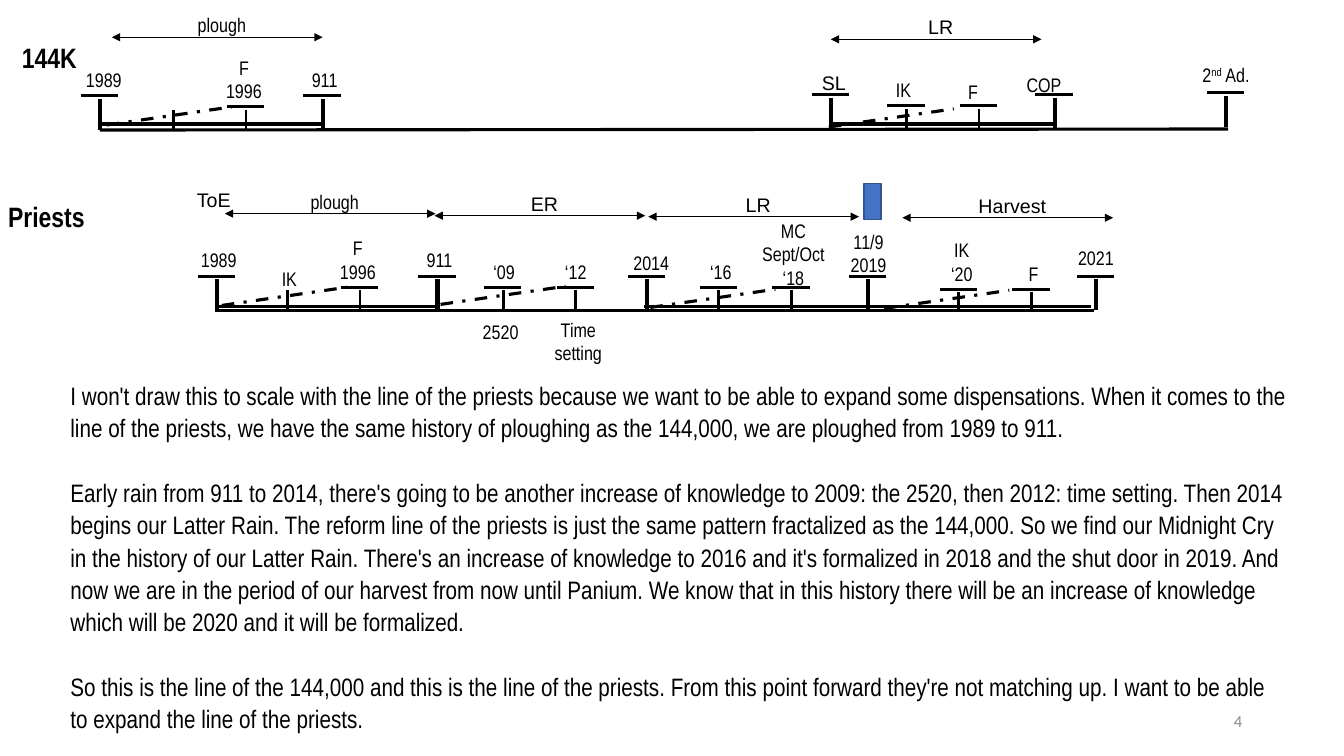
from lxml.etree import SubElement
from pptx import Presentation
from pptx.dml.color import RGBColor
from pptx.enum.dml import MSO_LINE
from pptx.enum.shapes import MSO_CONNECTOR, MSO_SHAPE
from pptx.enum.text import MSO_ANCHOR, MSO_AUTO_SIZE, PP_ALIGN
from pptx.oxml.ns import qn
from pptx.util import Inches, Pt

COLORS = {"ink": "000000", "door": "4472C4", "door_edge": "325491", "page": "8C8C8C"}
NARROW = "Arial Narrow"

BASELINES = [(0.99, 1.29, 12.18, 1.28), (2.13, 3.08, 10.85, 3.08)]
BARS = [(0.99, 1.23), (8.25, 1.23), (2.15, 3.04), (6.39, 3.04), (8.61, 3.04)]
RISES = [(1.06, 1.24), (8.22, 1.26), (2.2, 3.03), (4.37, 3.02), (6.45, 3.05), (8.77, 3.06)]
MAJOR_MARKS = [(0.99, 0.95), (3.2, 0.95), (8.24, 0.94), (10.46, 0.94), (12.16, 0.92),
               (2.15, 2.74), (4.34, 2.74), (6.42, 2.74), (8.61, 2.74), (10.87, 2.74)]
MINOR_MARKS = [(2.44, 1.06), (8.99, 1.05), (9.71, 1.05), (3.57, 2.85), (4.99, 2.85),
               (5.71, 2.85), (7.13, 2.85), (7.85, 2.85), (9.51, 2.87), (10.23, 2.87)]
UNCAPPED_MARKS = [(1.72, 1.06), (2.85, 2.85)]
PERIODS = [("plough", 1.11, 0.37, NARROW), ("LR", 8.24, 0.39, "Arial"),
           ("plough", 2.23, 2.12, NARROW), ("ER", 4.31, 2.14, "Arial"),
           ("LR", 6.43, 2.15, "Arial"), ("Harvest", 8.95, 2.16, "Arial")]
LABELS = [
    ("1989", 0.56, 0.63, 0.94, 0.31), ("911", 2.75, 0.63, 0.94, 0.31),
    ("F\n1996", 1.95, 0.51, 0.94, 0.62), ("COP", 9.97, 0.68, 0.77, 0.28),
    ("IK", 8.77, 0.73, 0.38, 0.28), ("F", 9.46, 0.75, 0.38, 0.28),
    ("1989", 1.7, 2.42, 0.94, 0.31), ("911", 3.89, 2.42, 0.94, 0.31),
    ("F\n1996", 3.08, 2.3, 0.94, 0.62), ("IK", 2.68, 2.61, 0.38, 0.28),
    ("‘09", 4.81, 2.54, 0.38, 0.28), ("‘12", 5.52, 2.54, 0.38, 0.28),
    ("2520", 4.64, 3.13, 0.65, 0.32), ("Time\nsetting", 5.34, 3.11, 0.79, 0.64),
    ("2014", 6.13, 2.45, 0.66, 0.31), ("‘16", 6.68, 2.54, 0.94, 0.31),
    ("MC\nSept/Oct\n‘18", 7.4, 2.13, 0.94, 0.72),
    ("11/9\n2019", 8.23, 2.24, 0.77, 0.5), ("IK\n‘20", 9.07, 2.32, 0.94, 0.55),
    ("F", 9.78, 2.56, 0.94, 0.3), ("2021", 10.4, 2.4, 0.94, 0.31),
]
BODY = [
    "I won't draw this to scale with the line of the priests because we want to be able to "
    "expand some dispensations. When it comes to the line of the priests, we have the same "
    "history of ploughing as the 144,000, we are ploughed from 1989 to 911.",
    "Early rain from 911 to 2014, there's going to be another increase of knowledge to 2009: "
    "the 2520, then 2012: time setting. Then 2014 begins our Latter Rain. The reform line of "
    "the priests is just the same pattern fractalized as the 144,000. So we find our Midnight "
    "Cry in the history of our Latter Rain. There's an increase of knowledge to 2016 and it's "
    "formalized in 2018 and the shut door in 2019. And now we are in the period of our harvest "
    "from now until Panium. We know that in this history there will be an increase of knowledge "
    "which will be 2020 and it will be formalized.",
    "So this is the line of the 144,000 and this is the line of the priests. From this point "
    "forward they're not matching up. I want to be able to expand the line of the priests.",
]


def rgb(name):
    return RGBColor.from_string(COLORS[name])


def style(p, size, font=NARROW, color="ink", bold=False):
    p.font.size = Pt(size)
    p.font.name = font
    p.font.color.rgb = rgb(color)
    p.font.bold = bold


def add_text(s, x, y, w, h, inset=0.1):
    tf = s.shapes.add_textbox(Inches(x), Inches(y), Inches(w), Inches(h)).text_frame
    tf.word_wrap = True
    tf.margin_left = tf.margin_right = Inches(inset)
    tf.margin_top = tf.margin_bottom = Inches(min(inset, 0.05))
    return tf


def add_label(s, text, x, y, w, h, font=NARROW, size=14, bold=False):
    tf = add_text(s, x, y, w, h, 0.04)
    tf.text = text
    for p in tf.paragraphs:
        p.alignment = PP_ALIGN.CENTER
        style(p, size, font, bold=bold)
    return tf


def add_line(s, x1, y1, x2, y2, width=2.25, dash=None, arrows=False):
    line = s.shapes.add_connector(MSO_CONNECTOR.STRAIGHT, Inches(x1), Inches(y1),
                                  Inches(x2), Inches(y2))
    line.line.color.rgb = rgb("ink")
    line.line.width = Pt(width)
    if dash:
        line.line.dash_style = dash
    if arrows:
        for end in ("a:headEnd", "a:tailEnd"):
            SubElement(line.line._get_or_add_ln(), qn(end), type="triangle")
    SubElement(line._element.spPr, qn("a:effectLst"))


def add_mark(s, x, y, height, width, capped=True):
    add_line(s, x, y + 0.03, x, y + 0.03 + height, width)
    if capped:
        add_line(s, x - 0.19, y, x + 0.18, y)


def add_period(s, text, x, y, font):
    add_label(s, text, x + 0.28, y - 0.28, 1.62, 0.44, font)
    add_line(s, x, y, x + 2.09, y, 0.5, arrows=True)


def add_second_advent(s):
    p = add_label(s, "", 11.69, 0.58, 0.94, 0.31).paragraphs[0]
    for text, raised in (("2", False), ("nd", True), (" Ad.", False)):
        r = p.add_run()
        r.text = text
        if raised:
            r.font._element.set("baseline", "30000")


def add_door(s):
    door = s.shapes.add_shape(MSO_SHAPE.RECTANGLE, Inches(8.57), Inches(1.82),
                              Inches(0.17), Inches(0.36))
    door.shadow.inherit = False
    door.fill.solid()
    door.fill.fore_color.rgb = rgb("door")
    door.line.color.rgb = rgb("door_edge")
    door.line.width = Pt(1)


def add_body(s):
    tf = add_text(s, 0.6, 3.7, 12.28, 3.65)
    tf.auto_size = MSO_AUTO_SIZE.SHAPE_TO_FIT_TEXT
    tf.text = "\n".join(BODY)
    for p in tf.paragraphs:
        style(p, 18)
        p.line_spacing = 1.07
    for p in tf.paragraphs[1:]:
        p.space_before = Pt(23.2)


def add_page_number(s):
    tf = add_text(s, 9.42, 6.95, 3, 0.4)
    tf.vertical_anchor = MSO_ANCHOR.MIDDLE
    tf.text = "4"
    p = tf.paragraphs[0]
    p.alignment = PP_ALIGN.RIGHT
    style(p, 12, "Calibri", "page")


def main():
    prs = Presentation()
    prs.slide_width, prs.slide_height = Inches(13.33), Inches(7.5)
    s = prs.slides.add_slide(prs.slide_layouts[6])
    add_page_number(s)
    add_body(s)
    for ends in BASELINES:
        add_line(s, *ends)
    for x, y in BARS:
        add_line(s, x, y, x + 2.21, y)
    for x, y in RISES:
        add_line(s, x, y, x + 1.24, y - 0.18, dash=MSO_LINE.DASH_DOT)
    for x, y in MAJOR_MARKS:
        add_mark(s, x, y, 0.31, 3)
    for x, y in MINOR_MARKS:
        add_mark(s, x, y, 0.19, 2)
    for x, y in UNCAPPED_MARKS:
        add_mark(s, x, y, 0.19, 2, capped=False)
    for period in PERIODS:
        add_period(s, *period)
    for label in LABELS:
        add_label(s, *label)
    add_label(s, "SL", 7.94, 0.66, 0.66, 0.31, "Arial")
    add_label(s, "ToE", 1.81, 1.82, 0.62, 0.44, "Arial")
    add_label(s, "144K", 0.02, 0.36, 0.94, 0.31, size=20, bold=True)
    add_label(s, "Priests", -0.01, 1.94, 0.94, 0.31, size=20, bold=True)
    add_second_advent(s)
    add_door(s)
    prs.save("out.pptx")


if __name__ == "__main__":
    main()
